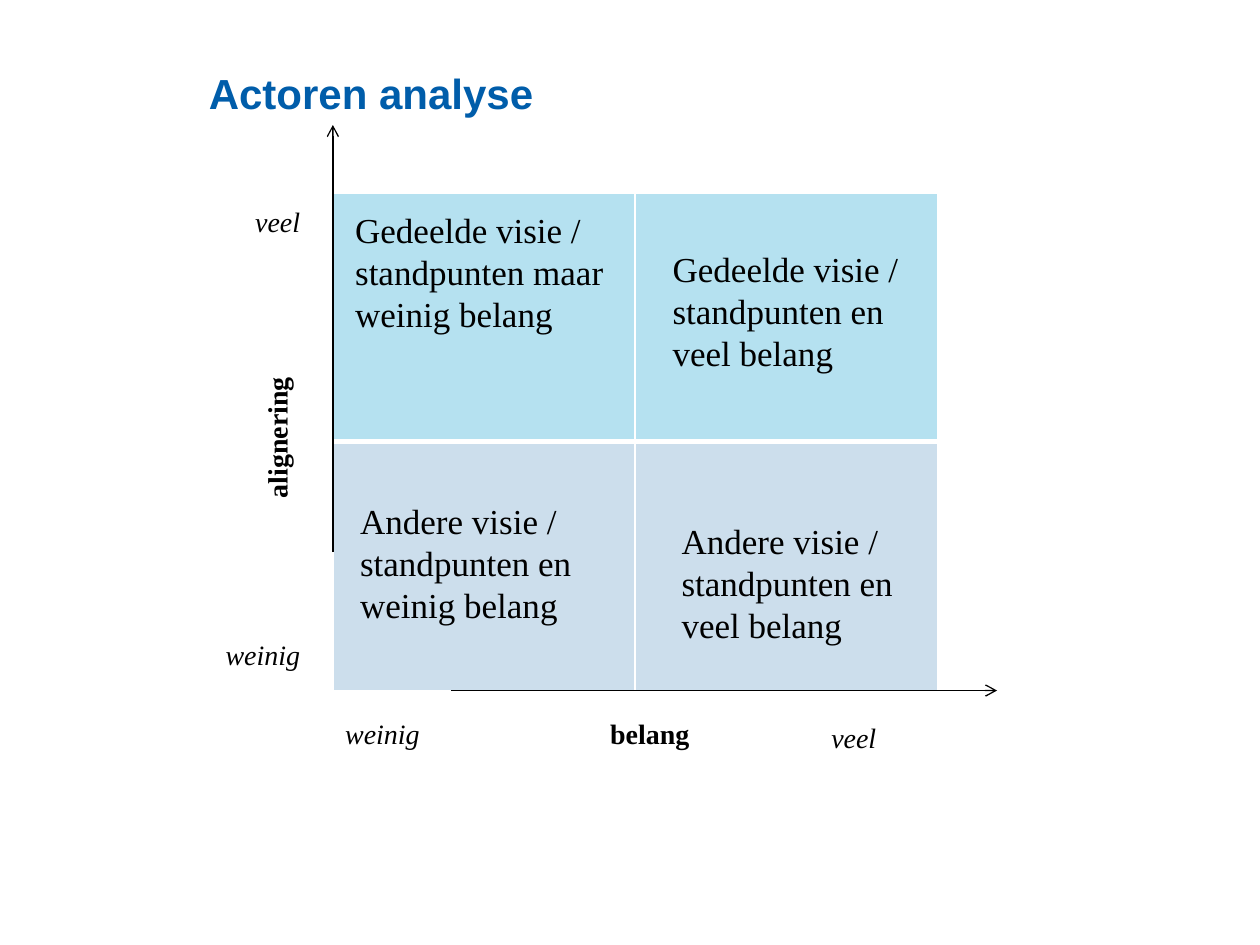
import lxml.etree
import pptx
import pptx.dml.color
import pptx.enum.shapes
import pptx.enum.text
import pptx.oxml.ns
import pptx.util
from pptx.util import Cm

RGBColor = pptx.dml.color.RGBColor
ALIGN = pptx.enum.text.PP_ALIGN
BLACK = RGBColor(0x00, 0x00, 0x00)
WHITE = RGBColor(0xFF, 0xFF, 0xFF)
TITLE_BLUE = RGBColor(0x00, 0x5D, 0xAA)
SHARED_VIEW = RGBColor(0x00, 0x99, 0xCC)
OTHER_VIEW = RGBColor(0xCC, 0xDE, 0xEC)
SERIF = "Times New Roman"


def add_child(parent, tag, **attributes):
    return lxml.etree.SubElement(parent, pptx.oxml.ns.qn(tag), attributes)


def add_text(slide, box, text, size, font=SERIF, color=BLACK, bold=False,
             italic=False, align=ALIGN.LEFT):
    label = slide.shapes.add_textbox(*box)
    frame = label.text_frame
    frame.word_wrap = True
    paragraph = frame.paragraphs[0]
    paragraph.text = text
    paragraph.alignment = align
    paragraph.font.name = font
    paragraph.font.size = pptx.util.Pt(size)
    paragraph.font.bold = bold
    paragraph.font.italic = italic
    paragraph.font.color.rgb = color
    return frame


def add_title(slide, box):
    title = add_text(slide, box, "Actoren analyse", 24, "Arial", TITLE_BLUE, bold=True)
    title.vertical_anchor = pptx.enum.text.MSO_ANCHOR.BOTTOM


def style_cell(cell, color, opacity, thick_side):
    """Give a quadrant its white borders and its fill."""
    properties = cell._tc.get_or_add_tcPr()
    for side in ("a:lnL", "a:lnR", "a:lnT", "a:lnB"):
        width = pptx.util.Pt(3 if side == thick_side else 1)
        border = add_child(properties, side, w=str(width))
        add_child(add_child(border, "a:solidFill"), "a:srgbClr", val=str(WHITE))
    cell.fill.solid()
    cell.fill.fore_color.rgb = color
    if opacity < 100:
        shade = properties.find(".//" + pptx.oxml.ns.qn("a:solidFill")
                                + "[last()]/" + pptx.oxml.ns.qn("a:srgbClr"))
        shade = properties.find(pptx.oxml.ns.qn("a:solidFill"))[0]
        add_child(shade, "a:alpha", val=str(opacity * 1000))


def add_quadrants(slide, box):
    left, top, width, height = box
    matrix = slide.shapes.add_table(2, 2, *box).table
    matrix.first_row = matrix.horz_banding = False
    row_styles = [(SHARED_VIEW, 29, "a:lnB"), (OTHER_VIEW, 100, "a:lnT")]
    for row, row_style in enumerate(row_styles):
        for column in range(2):
            style_cell(matrix.cell(row, column), *row_style)

    # Captions lie over the quadrants
    captions = [
        (0.2, 0.18, "Gedeelde visie / standpunten maar weinig belang"),
        (0.3, 6.05, "Andere visie / standpunten en weinig belang"),
        (6.6, 0.97, "Gedeelde visie / standpunten en veel belang"),
        (6.78, 6.45, "Andere visie / standpunten en veel belang"),
    ]
    for x, y, text in captions:
        add_text(slide, (left + Cm(x), top + Cm(y), Cm(5.59), Cm(2.82)), text, 20)


def add_arrow(slide, *ends):
    arrow = slide.shapes.add_connector(pptx.enum.shapes.MSO_CONNECTOR.STRAIGHT, *ends)
    arrow.line.color.rgb = BLACK
    arrow.line.width = pptx.util.Pt(0.75)
    add_child(arrow.line._get_or_add_ln(), "a:tailEnd", type="arrow")
    add_child(arrow._element.spPr, "a:effectLst")


def add_axes(slide, box):
    left, top, width, height = box
    bottom = top + height
    add_arrow(slide, left, top + Cm(7.24), left, top - Cm(1.37))
    add_arrow(slide, left + Cm(2.39), bottom, left + Cm(13.39), bottom)

    # Ends of both scales
    scale_ends = [
        (9.8, 10.52, 2.79, "veel", ALIGN.LEFT),
        (0, 10.44, 2.21, "weinig", ALIGN.LEFT),
        (-2.41, 8.84, 2.21, "weinig", ALIGN.LEFT),
        (-3.2, 0.1, 2.79, "veel", ALIGN.RIGHT),
    ]
    for x, y, label_width, text, align in scale_ends:
        add_text(slide, (left + Cm(x), top + Cm(y), Cm(label_width), Cm(0.94)),
                 text, 16, italic=True, align=align)

    # Axis names
    add_text(slide, (left + Cm(2.39), top + Cm(10.44), Cm(8), Cm(0.94)),
             "belang", 16, bold=True, align=ALIGN.CENTER)
    alignment_name = add_text(slide, (left - Cm(1.6), top + Cm(1.24), Cm(1.19), Cm(7.39)),
                              "alignering", 16, bold=True, align=ALIGN.CENTER)
    alignment_name._txBody.bodyPr.set("vert", "vert270")


def main():
    presentation = pptx.Presentation()
    presentation.slide_width, presentation.slide_height = Cm(25.4), Cm(19.05)
    slide = presentation.slides.add_slide(presentation.slide_layouts[6])
    matrix_box = (Cm(6.71), Cm(3.89), Cm(12.19), Cm(10.03))
    add_quadrants(slide, matrix_box)
    add_axes(slide, matrix_box)
    add_title(slide, (Cm(3.96), Cm(0.61), Cm(19.05), Cm(1.9)))
    presentation.save("out.pptx")


if __name__ == "__main__":
    main()
